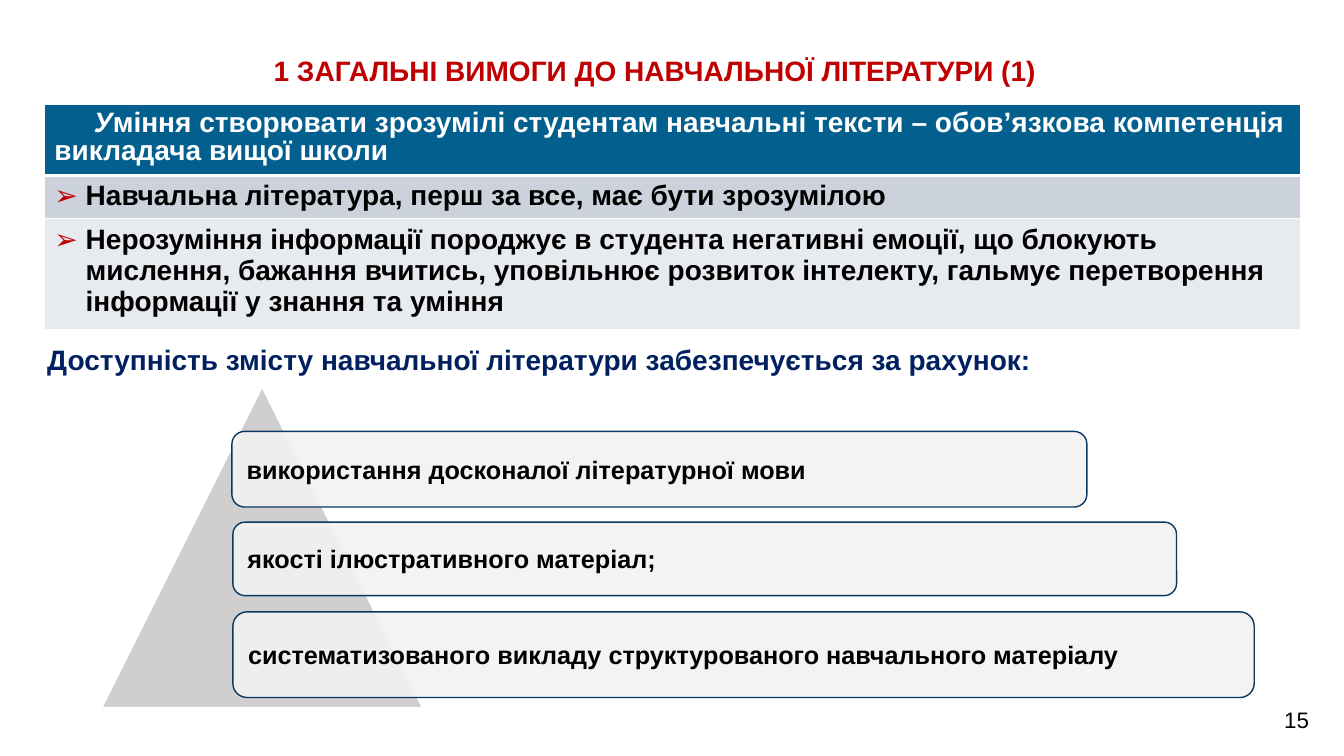
from lxml import etree
from pptx import Presentation
from pptx.dml.color import RGBColor
from pptx.enum.shapes import MSO_SHAPE
from pptx.enum.text import MSO_ANCHOR, MSO_AUTO_SIZE, PP_ALIGN
from pptx.oxml.ns import qn
from pptx.util import Inches, Pt

TRIANGLE = MSO_SHAPE.ISOSCELES_TRIANGLE
ROUNDED = MSO_SHAPE.ROUNDED_RECTANGLE
MIDDLE = MSO_ANCHOR.MIDDLE
NO_AUTOFIT = MSO_AUTO_SIZE.NONE
LEFT, CENTER = PP_ALIGN.LEFT, PP_ALIGN.CENTER

FONT = "Arial"
BLACK, WHITE, RED, NAVY = "000000", "FFFFFF", "C00000", "002060"
HEADER_FILL = "035F8E"
HEADER_START = "У"
HEADER_REST = ("міння створювати зрозумілі студентам навчальні тексти – "
               "обов’язкова компетенція викладача вищої школи")
# text, row height, fill
BULLET_ROWS = [
    ("Навчальна література, перш за все, має бути зрозумілою", 0.43, "CCD2DB"),
    ("Нерозуміння інформації породжує в студента негативні емоції, що блокують "
     "мислення, бажання вчитись, уповільнює розвиток інтелекту, гальмує "
     "перетворення інформації у знання та уміння", 1.1, "E7EAEE"),
]
# text, left, top, width, height
FACTORS = [
    ("використання досконалої літературної мови", 2.3, 4.28, 8.48, 0.75),
    ("якості ілюстративного матеріал;", 2.31, 5.18, 9.36, 0.73),
    ("систематизованого викладу структурованого навчального матеріалу",
     2.31, 6.07, 10.13, 0.85),
]


def color(value):
    return RGBColor.from_string(value)


def inches(*lengths):
    return [Inches(length) for length in lengths]


def format_runs(paragraph, size, font_color, bold=True):
    for run in paragraph.runs:
        run.font.name = FONT
        run.font.size = Pt(size)
        run.font.bold = bold
        run.font.color.rgb = color(font_color)


def add_title(slide, text):
    title = slide.shapes.title
    title.left, title.top, title.width, title.height = inches(2.1, 0.48, 8.79, 0.44)
    frame = title.text_frame
    frame.text = text
    frame.auto_size = NO_AUTOFIT
    frame.vertical_anchor = MIDDLE
    frame.paragraphs[0].alignment = CENTER
    format_runs(frame.paragraphs[0], 20, RED)


def add_label(slide, text, box, size, font_color, bold, alignment=LEFT):
    frame = slide.shapes.add_textbox(*inches(*box)).text_frame
    frame.word_wrap = True
    frame.text = text
    paragraph = frame.paragraphs[0]
    paragraph.alignment = alignment
    paragraph.line_spacing = 0.9
    format_runs(paragraph, size, font_color, bold)


def add_block(slide, preset, box, fill, line):
    shape = slide.shapes.add_shape(preset, *inches(*box))
    shape.shadow.inherit = False
    shape.fill.solid()
    shape.fill.fore_color.rgb = color(fill)
    shape.line.color.rgb = color(line)
    shape.line.width = Pt(1)
    return shape


def add_factor(slide, text, *box):
    """Add a slightly transparent rounded card with its text."""
    card = add_block(slide, ROUNDED, box, "F2F2F2", "093864")
    fill_color = card.fill._xPr.find(qn("a:solidFill"))[0]
    etree.SubElement(fill_color, qn("a:alpha"), val="90000")
    frame = card.text_frame
    frame.word_wrap = True
    frame.vertical_anchor = MIDDLE
    frame.margin_left = frame.margin_right = Inches(0.11)
    frame.text = text
    frame.paragraphs[0].alignment = LEFT
    format_runs(frame.paragraphs[0], 18, BLACK)


def set_indent(paragraph, margin, first_line):
    properties = paragraph._p.get_or_add_pPr()
    properties.set("marL", str(Inches(margin)))
    properties.set("indent", str(Inches(first_line)))
    return properties


def add_bullet(paragraph):
    properties = set_indent(paragraph, 0.31, -0.31)
    bullet_color = etree.SubElement(properties, qn("a:buClr"))
    etree.SubElement(bullet_color, qn("a:srgbClr"), val=RED)
    etree.SubElement(properties, qn("a:buFont"), typeface=FONT)
    etree.SubElement(properties, qn("a:buChar"), char="➢")


def style_cell(cell, fill, top_width, bottom_width):
    """Give the cell white borders, in points, and a solid fill."""
    properties = cell._tc.get_or_add_tcPr()
    widths = {"L": 1, "R": 1, "T": top_width, "B": bottom_width}
    for side, width in widths.items():
        border = etree.SubElement(properties, qn(f"a:ln{side}"), w=str(Pt(width)))
        border_fill = etree.SubElement(border, qn("a:solidFill"))
        etree.SubElement(border_fill, qn("a:srgbClr"), val=WHITE)
    cell.fill.solid()
    cell.fill.fore_color.rgb = color(fill)


def add_requirements_table(slide):
    row_count = len(BULLET_ROWS) + 1
    table = slide.shapes.add_table(row_count, 1, *inches(0.44, 1.04, 12.46, 2.23)).table

    table.rows[0].height = Inches(0.7)
    header = table.cell(0, 0)
    style_cell(header, HEADER_FILL, 1, 3)
    paragraph = header.text_frame.paragraphs[0]
    set_indent(paragraph, 0, 0.39)
    paragraph.line_spacing = 0.9
    for text, italic in ((HEADER_START, True), (HEADER_REST, False)):
        run = paragraph.add_run()
        run.text = text
        run.font.italic = italic
    format_runs(paragraph, 20, WHITE)

    for index, (text, height, fill) in enumerate(BULLET_ROWS, start=1):
        table.rows[index].height = Inches(height)
        cell = table.cell(index, 0)
        style_cell(cell, fill, 3 if index == 1 else 1, 1)
        paragraph = cell.text_frame.paragraphs[0]
        add_bullet(paragraph)
        paragraph.text = text
        format_runs(paragraph, 20, BLACK)


def main():
    presentation = Presentation()
    presentation.slide_width, presentation.slide_height = inches(13.33, 7.5)
    title_only = presentation.slide_layouts[5]
    slide = presentation.slides.add_slide(title_only)

    add_title(slide, "1 ЗАГАЛЬНІ ВИМОГИ ДО НАВЧАЛЬНОЇ ЛІТЕРАТУРИ (1)")
    add_requirements_table(slide)
    add_label(slide, "Доступність змісту навчальної літератури забезпечується за рахунок:",
              (0.37, 3.39, 12.75, 0.62), 20, NAVY, True)
    add_block(slide, TRIANGLE, (1.01, 3.84, 3.18, 3.18), "D0CECE", WHITE)
    for factor in FACTORS:
        add_factor(slide, *factor)
    add_label(slide, "15", (12.54, 6.99, 0.64, 0.37), 16, BLACK, False, CENTER)

    presentation.save("out.pptx")


if __name__ == "__main__":
    main()
